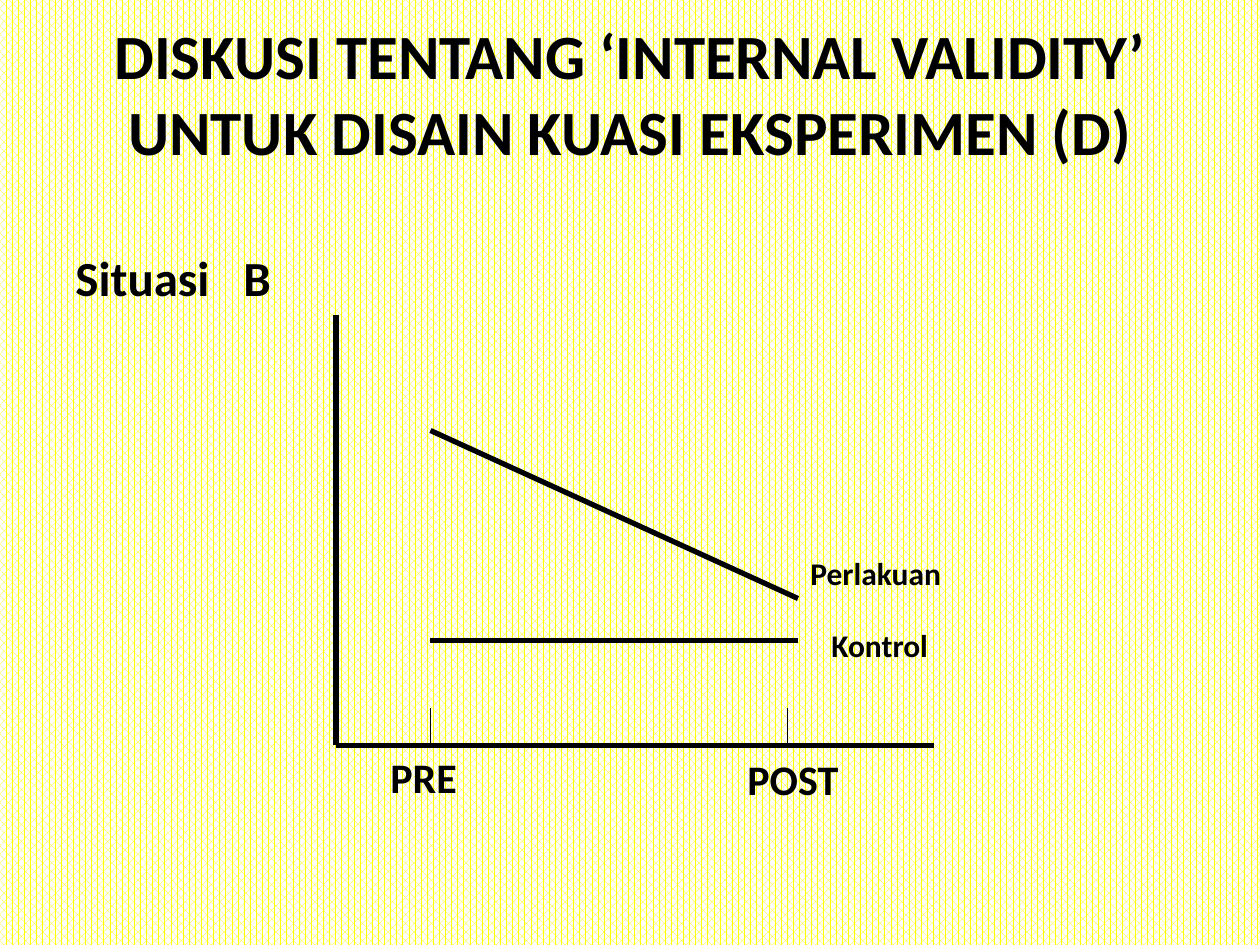
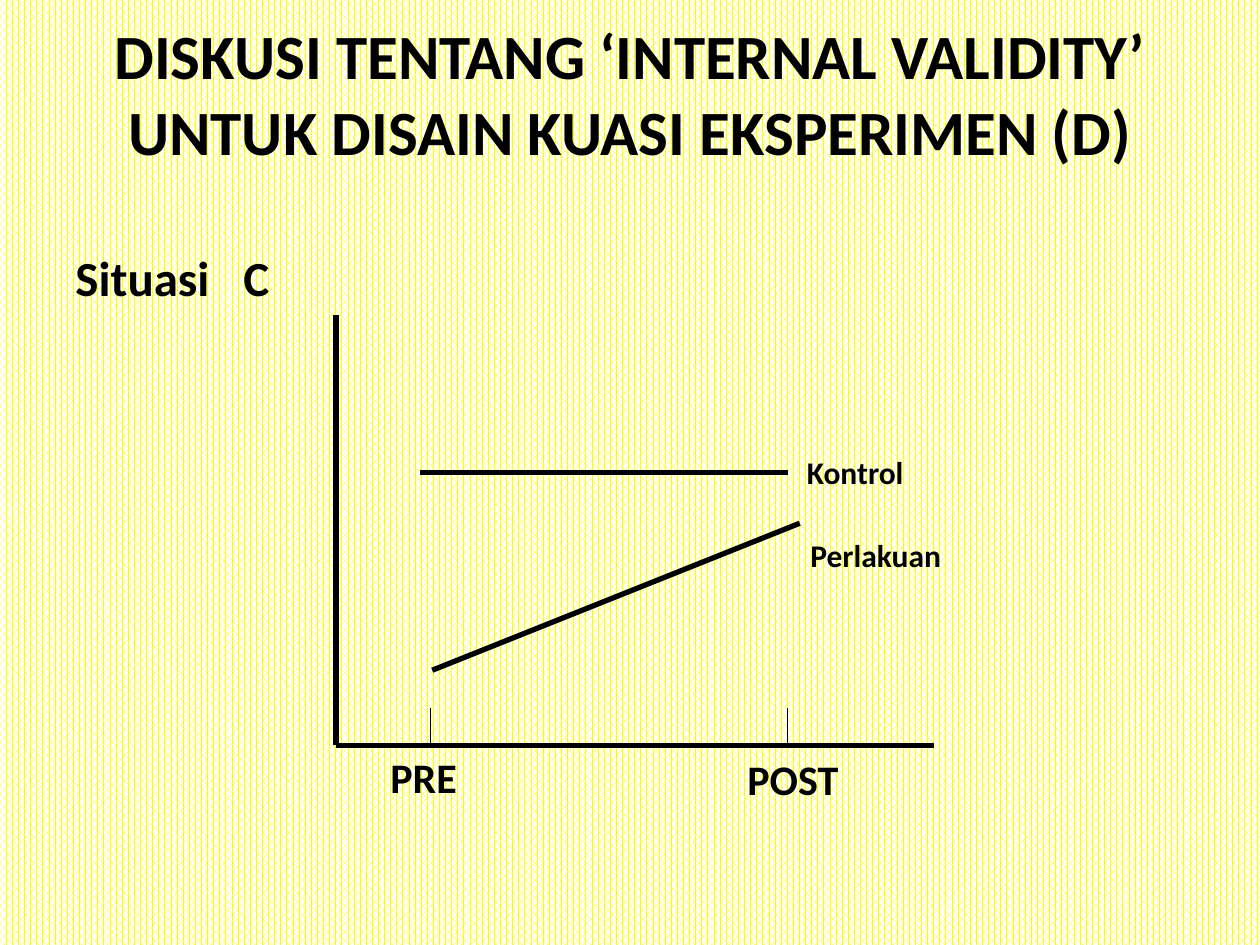
from dataclasses import dataclass
from typing import NamedTuple

from lxml import etree
from pptx import Presentation
from pptx.dml.color import RGBColor
from pptx.enum.dml import MSO_PATTERN
from pptx.enum.shapes import MSO_CONNECTOR
from pptx.enum.text import MSO_ANCHOR, MSO_AUTO_SIZE, PP_ALIGN
from pptx.oxml.ns import qn
from pptx.presentation import Presentation as PresentationType
from pptx.shapes.autoshape import Shape
from pptx.slide import Slide
from pptx.util import Length, Pt

STRAIGHT = MSO_CONNECTOR.STRAIGHT
PATTERN = MSO_PATTERN.PERCENT_70
TOP = MSO_ANCHOR.TOP
GROW = MSO_AUTO_SIZE.SHAPE_TO_FIT_TEXT
LEFT, CENTER = PP_ALIGN.LEFT, PP_ALIGN.CENTER


@dataclass(frozen=True)
class Theme:
    font: str = "Calibri"
    ink: RGBColor = RGBColor(0x00, 0x00, 0x00)
    pattern_front: RGBColor = RGBColor(0xFF, 0xFF, 0x00)
    pattern_back: RGBColor = RGBColor(0xFF, 0xFF, 0xFF)
    title_size: Length = Pt(36)
    situation_size: Length = Pt(28)
    axis_size: Length = Pt(24)
    group_size: Length = Pt(18)
    thick: Length = Pt(3)
    thin: Length = Pt(0.75)


THEME = Theme()
TITLE = "DISKUSI TENTANG ‘INTERNAL VALIDITY’ UNTUK DISAIN KUASI EKSPERIMEN (D)"


class Box(NamedTuple):
    """Left, top, width and height in points."""
    left: float
    top: float
    width: float
    height: float


class Segment(NamedTuple):
    """Start and end of a line in points."""
    start_x: float
    start_y: float
    end_x: float
    end_y: float


class Label(NamedTuple):
    text: str
    box: Box


class Group(NamedTuple):
    label: Label
    trend: Segment


class Situation(NamedTuple):
    letter: str
    groups: tuple[Group, ...]


ORIGIN_X, ORIGIN_Y = 192, 426
AXIS_RIGHT, AXIS_TOP = 534, 180
TICK_HEIGHT = 21.6
TICKS_X = (246, 450)
AXES = (
    Segment(ORIGIN_X, ORIGIN_Y, AXIS_RIGHT, ORIGIN_Y),
    Segment(ORIGIN_X, AXIS_TOP, ORIGIN_X, ORIGIN_Y),
)
AXIS_LABELS = (
    Label("PRE", Box(216, 426, 72, 36)),
    Label("POST", Box(420, 427, 72, 36)),
)
SITUATION_BOX = Box(36, 138, 156, 41)
SITUATION_TAB = Pt(96)

SITUATIONS = (
    Situation("B", (
        Group(Label("Kontrol", Box(468, 354, 144, 29)), Segment(456, 366, 246, 366)),
        Group(Label("Perlakuan", Box(456, 313, 156, 29)), Segment(456, 342, 246, 246)),
    )),
    Situation("C", (
        Group(Label("Kontrol", Box(454, 255.5, 144, 29)), Segment(450, 270, 240, 270)),
        Group(Label("Perlakuan", Box(456, 303, 156, 29)), Segment(457, 299, 247, 383)),
    )),
)


def write_text(shape: Shape, text: str, *, size: Length,
               alignment: PP_ALIGN = LEFT) -> None:
    frame = shape.text_frame
    frame.word_wrap = True
    frame.auto_size = GROW
    frame.vertical_anchor = TOP
    paragraph = frame.paragraphs[0]
    paragraph.alignment = alignment
    run = paragraph.add_run()
    run.text = text
    run.font.name = THEME.font
    run.font.size = size
    run.font.bold = True
    run.font.color.rgb = THEME.ink


def add_label(slide: Slide, label: Label, size: Length) -> Shape:
    shape = slide.shapes.add_textbox(*map(Pt, label.box))
    write_text(shape, label.text, size=size)
    return shape


def add_line(slide: Slide, segment: Segment, width: Length) -> None:
    line = slide.shapes.add_connector(STRAIGHT, *map(Pt, segment))
    line.line.color.rgb = THEME.ink
    line.line.width = width
    etree.SubElement(line._element.spPr, qn("a:effectLst"))


def add_title(slide: Slide) -> None:
    title = slide.shapes.title
    title.left, title.top, title.width, title.height = map(Pt, Box(36, 6, 648, 94.5))
    write_text(title, TITLE, size=THEME.title_size, alignment=CENTER)


def add_axes(slide: Slide) -> None:
    for axis in AXES:
        add_line(slide, axis, THEME.thick)
    for tick_x in TICKS_X:
        add_line(slide, Segment(tick_x, ORIGIN_Y, tick_x, ORIGIN_Y - TICK_HEIGHT), THEME.thin)
    for label in AXIS_LABELS:
        add_label(slide, label, THEME.axis_size)


def add_situation_name(slide: Slide, letter: str) -> None:
    """Write the word and its letter, set apart by a tab stop."""
    shape = add_label(slide, Label(f"Situasi\t{letter}", SITUATION_BOX), THEME.situation_size)
    properties = shape.text_frame.paragraphs[0]._p.get_or_add_pPr()
    tab_list = etree.SubElement(properties, qn("a:tabLst"))
    etree.SubElement(tab_list, qn("a:tab"), pos=str(SITUATION_TAB), algn="l")


def add_situation_slide(presentation: PresentationType, situation: Situation) -> None:
    slide = presentation.slides.add_slide(presentation.slide_layouts.get_by_name("Title Only"))
    add_title(slide)
    add_axes(slide)
    for group in situation.groups:
        add_line(slide, group.trend, THEME.thick)
    for group in situation.groups:
        add_label(slide, group.label, THEME.group_size)
    add_situation_name(slide, situation.letter)


def set_background(presentation: PresentationType) -> None:
    fill = presentation.slide_master.background.fill
    fill.patterned()
    fill.pattern = PATTERN
    fill.fore_color.rgb = THEME.pattern_front
    fill.back_color.rgb = THEME.pattern_back


def main() -> None:
    presentation = Presentation()
    presentation.slide_width, presentation.slide_height = Pt(720), Pt(540)
    set_background(presentation)
    for situation in SITUATIONS:
        add_situation_slide(presentation, situation)
    presentation.save("out.pptx")


if __name__ == "__main__":
    main()
